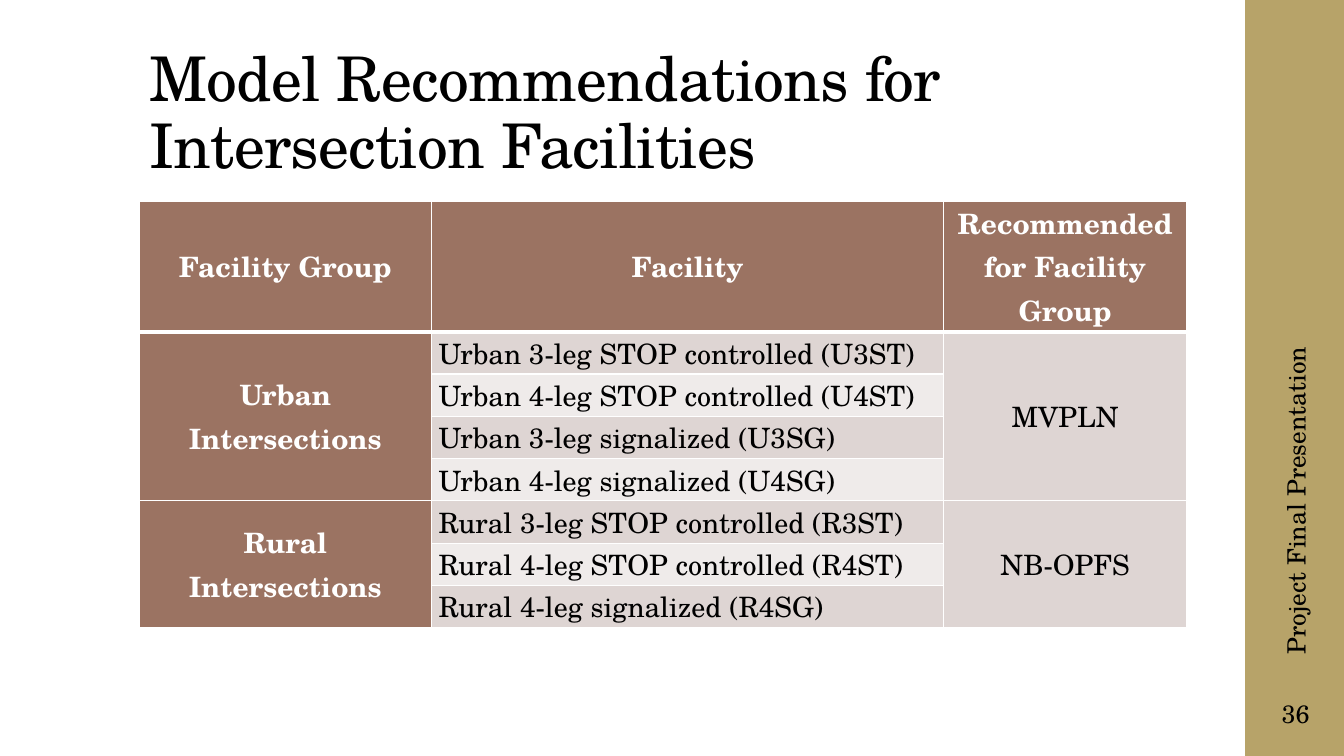
from lxml import etree
from pptx import Presentation
from pptx.dml.color import RGBColor
from pptx.enum.shapes import MSO_SHAPE
from pptx.enum.text import MSO_ANCHOR, MSO_AUTO_SIZE, PP_ALIGN
from pptx.oxml.ns import qn
from pptx.util import Inches, Pt

RECT = MSO_SHAPE.RECTANGLE
MIDDLE, BOTTOM = MSO_ANCHOR.MIDDLE, MSO_ANCHOR.BOTTOM
LEFT, CENTER = PP_ALIGN.LEFT, PP_ALIGN.CENTER
NO_FIT = MSO_AUTO_SIZE.NONE
FONT = "TeX Gyre Schola"
COLORS = {"gold": "B7A369", "brown": "9B7362", "band": "DED5D3",
          "light": "EFEBEA", "white": "FFFFFF", "black": "000000"}
HEADERS = ["Facility Group", "Facility", "Recommended for Facility Group"]
GROUPS = [
    ("Urban Intersections", "MVPLN",
     ["Urban 3-leg STOP controlled (U3ST)", "Urban 4-leg STOP controlled (U4ST)",
      "Urban 3-leg signalized (U3SG)", "Urban 4-leg signalized (U4SG)"]),
    ("Rural Intersections", "NB-OPFS",
     ["Rural 3-leg STOP controlled (R3ST)", "Rural 4-leg STOP controlled (R4ST)",
      "Rural 4-leg signalized (R4SG)"]),
]
COL_WIDTHS = [2.9, 5.08, 2.41]
ROW_HEIGHT = 0.42


def rgb(name):
    return RGBColor.from_string(COLORS[name])


def put_text(tf, text, size=18, color="black", bold=False, align=LEFT,
             anchor=MIDDLE, spacing=None, tracking=None):
    tf.word_wrap = True
    tf.vertical_anchor = anchor
    p = tf.paragraphs[0]
    p.alignment = align
    p.line_spacing = spacing
    r = p.add_run()
    r.text = text
    r.font.name, r.font.size, r.font.bold = FONT, Pt(size), bold
    r.font.color.rgb = rgb(color)
    if tracking is not None:
        r._r.get_or_add_rPr().set("spc", str(round(tracking * 100)))


def add_title(s, text):
    sp = s.shapes.title
    sp.left, sp.top = Inches(1.38), Inches(0.4)
    sp.width, sp.height = Inches(10.6), Inches(1.45)
    sp.text_frame.auto_size = NO_FIT
    put_text(sp.text_frame, text, size=44, anchor=BOTTOM, spacing=0.9,
             tracking=-0.5)


def add_sidebar(s):
    sp = s.shapes.add_shape(RECT, Inches(12.35), 0, Inches(1), Inches(7.5))
    sp.shadow.inherit = False
    sp.fill.solid()
    sp.fill.fore_color.rgb = rgb("gold")
    sp.line.fill.background()


def add_label(s, text, left, top, width, height, rotation=0, align=LEFT):
    sp = s.shapes.add_textbox(Inches(left), Inches(top), Inches(width),
                              Inches(height))
    sp.rotation = rotation
    put_text(sp.text_frame, text, align=align)


def set_borders(cell, top=1, bottom=1):
    tc_pr = cell._tc.get_or_add_tcPr()
    for side, width in (("L", 1), ("R", 1), ("T", top), ("B", bottom)):
        ln = etree.SubElement(tc_pr, qn(f"a:ln{side}"), w=str(Pt(width)))
        fill = etree.SubElement(ln, qn("a:solidFill"))
        etree.SubElement(fill, qn("a:srgbClr"), val=COLORS["white"])


def style_cell(cell, row, fill, margin):
    set_borders(cell, top=3 if row == 1 else 1, bottom=3 if row == 0 else 1)
    cell.fill.solid()
    cell.fill.fore_color.rgb = rgb(fill)
    cell.margin_left = cell.margin_right = Inches(margin)
    cell.margin_top = cell.margin_bottom = 0


def fill_cell(cell, text, **fmt):
    put_text(cell.text_frame, text, size=20, **fmt)
    cell.vertical_anchor = MIDDLE


def add_facility_table(s):
    n_rows = 1 + sum(len(facilities) for _, _, facilities in GROUPS)
    frame = s.shapes.add_table(n_rows, len(HEADERS), Inches(1.38), Inches(2),
                               Inches(sum(COL_WIDTHS)),
                               Inches(ROW_HEIGHT * (n_rows + 2)))
    table = frame.table
    for col, width in zip(table.columns, COL_WIDTHS):
        col.width = Inches(width)
    for i, row in enumerate(table.rows):
        row.height = Inches(ROW_HEIGHT * (3 if i == 0 else 1))
        stripe = "band" if i % 2 else "light"
        fills = ["brown"] * 3 if i == 0 else ["brown", stripe, "band"]
        for j, fill in enumerate(fills):
            margin = 0.07 if i and j == 1 else 0.04
            style_cell(table.cell(i, j), i, fill, margin)
    heading = {"color": "white", "bold": True, "align": CENTER}
    for j, text in enumerate(HEADERS):
        fill_cell(table.cell(0, j), text, **heading)
    first = 1
    for group, model, facilities in GROUPS:
        last = first + len(facilities) - 1
        for j in (0, 2):
            table.cell(first, j).merge(table.cell(last, j))
        fill_cell(table.cell(first, 0), group, **heading)
        fill_cell(table.cell(first, 2), model, align=CENTER)
        for i, facility in enumerate(facilities, first):
            fill_cell(table.cell(i, 1), facility)
        first = last + 1


def main():
    """Build the slide of recommended models for intersection facilities."""
    prs = Presentation()
    prs.slide_width, prs.slide_height = Inches(13.33), Inches(7.5)
    s = prs.slides.add_slide(prs.slide_layouts[5])
    add_sidebar(s)
    add_title(s, "Model Recommendations for Intersection Facilities")
    add_facility_table(s)
    add_label(s, "Project Final Presentation", 10.89, 4.43, 3.92, 0.4,
              rotation=270)
    add_label(s, "36", 12.35, 6.75, 1, 0.65, align=CENTER)
    prs.save("out.pptx")


if __name__ == "__main__":
    main()
